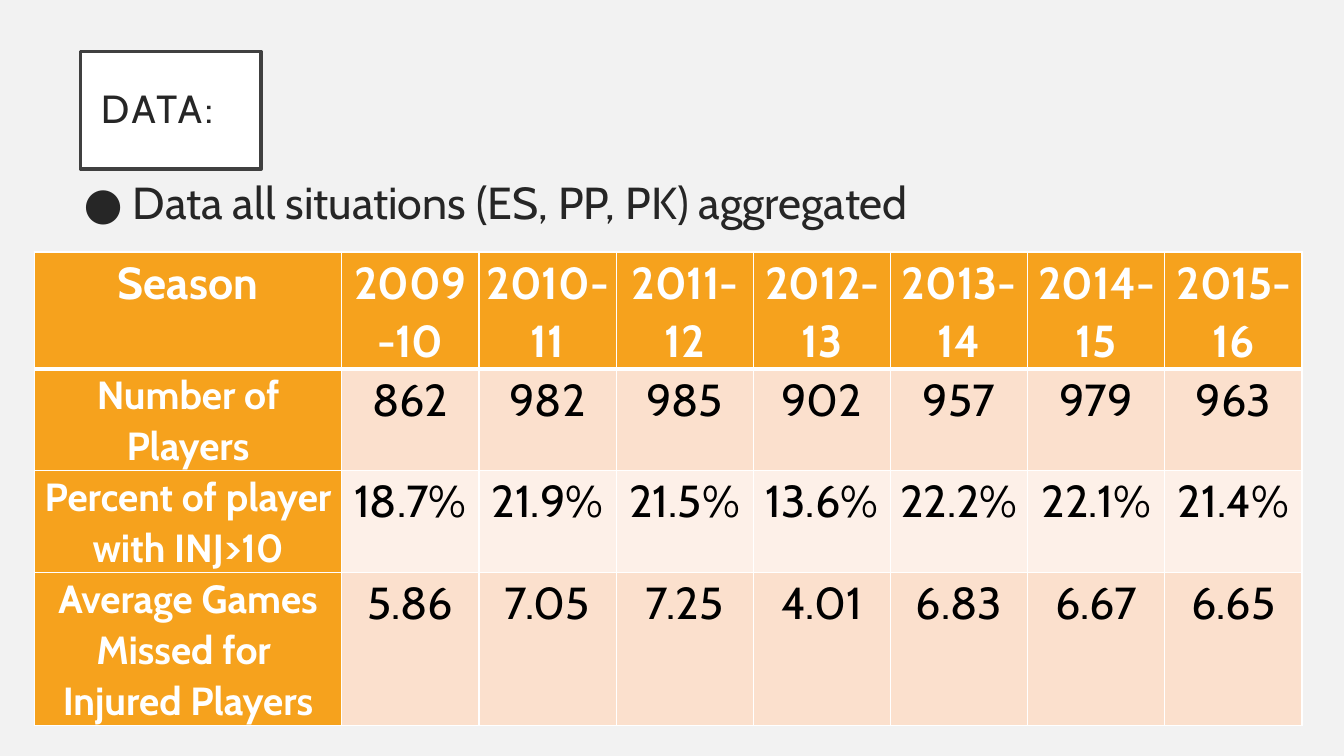
"""Build the slide with the season table of player injury data."""
from dataclasses import dataclass

from lxml import etree
from pptx import Presentation
from pptx import util as u
from pptx.dml import color
from pptx.enum import text
from pptx.oxml import ns


@dataclass(frozen=True)
class Theme:
    font: str = "Cabin"
    background: str = "F2F2F2"
    white: str = "FFFFFF"
    ink: str = "262626"
    frame: str = "404040"
    black: str = "000000"
    accent: str = "F6A21D"
    bands: tuple[str, str] = ("FBE0CD", "FDF0E8")
    small: float = 28
    large: float = 32


@dataclass(frozen=True)
class Box:
    left: float
    top: float
    width: float
    height: float


@dataclass(frozen=True)
class TableRow:
    label: tuple[str, ...]
    values: tuple[str, ...]
    height: float


THEME = Theme()
TITLE_BOX = Box(57.6, 36.7, 128.9, 84.2)
BODY_BOX = Box(52.6, 121, 893.5, 251.3)
TABLE_BOX = Box(24.5, 180, 905.6, 326.9)
LABEL_WIDTH, VALUE_WIDTH = 219.6, 98
ROWS = (
    TableRow(("Season",), ("2009-10", "2010-11", "2011-12", "2012-13", "2013-14", "2014-15", "2015-16"), 49),
    TableRow(("Number of Players",), ("862", "982", "985", "902", "957", "979", "963"), 50.4),
    TableRow(("Percent of player with INJ>10",),
             ("18.7%", "21.9%", "21.5%", "13.6%", "22.2%", "22.1%", "21.4%"), 42.5),
    TableRow(("Average Games Missed for ", "Injured Players"),
             ("5.86", "7.05", "7.25", "4.01", "6.83", "6.67", "6.65"), 69.8),
)


def rgb(value: str) -> color.RGBColor:
    return color.RGBColor.from_string(value)


def write(frame, lines: tuple[str, ...], *, size: float, ink: str, bold: bool = False,
          align=text.PP_ALIGN.LEFT, line_spacing: float = 1, before: float = 0,
          tracking: float = 0) -> None:
    for index, line in enumerate(lines):
        paragraph = frame.add_paragraph() if index else frame.paragraphs[0]
        paragraph.alignment = align
        paragraph.line_spacing = line_spacing
        paragraph.space_before = u.Pt(before)
        run = paragraph.add_run()
        run.text = line
        run.font.name = THEME.font
        run.font.size = u.Pt(size)
        run.font.bold = bold
        run.font.color.rgb = rgb(ink)
        if tracking:
            run._r.get_or_add_rPr().set("spc", str(round(tracking * 100)))


def place(shape, box: Box) -> None:
    shape.left, shape.top = u.Pt(box.left), u.Pt(box.top)
    shape.width, shape.height = u.Pt(box.width), u.Pt(box.height)


def set_margins(target, horizontal: float, vertical: float) -> None:
    target.margin_left = target.margin_right = u.Pt(horizontal)
    target.margin_top = target.margin_bottom = u.Pt(vertical)


def add_title(slide) -> None:
    title = slide.shapes.title
    place(title, TITLE_BOX)
    title.fill.solid()
    title.fill.fore_color.rgb = rgb(THEME.white)
    title.line.color.rgb = rgb(THEME.frame)
    title.line.width = u.Pt(2.5)
    frame = title.text_frame
    frame.auto_size = text.MSO_AUTO_SIZE.NONE
    frame.vertical_anchor = text.MSO_ANCHOR.MIDDLE
    set_margins(frame, 14.4, 14.4)
    write(frame, ("DATA:",), size=THEME.small, ink=THEME.ink, line_spacing=0.9, tracking=2)


def add_body(slide) -> None:
    body = slide.placeholders[1]
    place(body, BODY_BOX)
    frame = body.text_frame
    frame.auto_size = text.MSO_AUTO_SIZE.NONE
    write(frame, ("● Data all situations (ES, PP, PK) aggregated",),
          size=THEME.large, ink=THEME.ink, before=10)
    properties = frame.paragraphs[0]._p.get_or_add_pPr()
    properties.set("marL", "0")
    properties.set("indent", "0")
    etree.SubElement(properties, ns.qn("a:buNone"))


def add_borders(cell, top: float, bottom: float) -> None:
    properties = cell._tc.get_or_add_tcPr()
    for side, width in (("L", 1), ("R", 1), ("T", top), ("B", bottom)):
        line = etree.SubElement(properties, ns.qn(f"a:ln{side}"), w=str(u.Pt(width)))
        fill = etree.SubElement(line, ns.qn("a:solidFill"))
        etree.SubElement(fill, ns.qn("a:srgbClr"), val=THEME.white)


def add_season_table(slide) -> None:
    columns = len(ROWS[0].values) + 1
    graphic = slide.shapes.add_table(
        len(ROWS), columns, u.Pt(TABLE_BOX.left), u.Pt(TABLE_BOX.top),
        u.Pt(TABLE_BOX.width), u.Pt(TABLE_BOX.height))
    table = graphic.table
    for index, column in enumerate(table.columns):
        column.width = u.Pt(VALUE_WIDTH if index else LABEL_WIDTH)
    for row_index, row in enumerate(ROWS):
        table.rows[row_index].height = u.Pt(row.height)
        for column_index, lines in enumerate((row.label, *((value,) for value in row.values))):
            is_header = row_index == 0
            is_label = is_header or column_index == 0
            cell = table.cell(row_index, column_index)
            set_margins(cell, 5, 0)
            add_borders(cell, top=3 if row_index == 1 else 1, bottom=3 if is_header else 1)
            cell.fill.solid()
            cell.fill.fore_color.rgb = rgb(THEME.accent if is_label else THEME.bands[(row_index - 1) % 2])
            write(cell.text_frame, lines, bold=is_label, line_spacing=1.07,
                  size=THEME.small if is_label and not is_header else THEME.large,
                  ink=THEME.white if is_label else THEME.black, align=text.PP_ALIGN.CENTER)
    graphic.height = u.Pt(TABLE_BOX.height)


def main() -> None:
    presentation = Presentation()
    presentation.slide_width, presentation.slide_height = u.Pt(960), u.Pt(540)
    slide = presentation.slides.add_slide(presentation.slide_layouts[1])
    slide.background.fill.solid()
    slide.background.fill.fore_color.rgb = rgb(THEME.background)
    add_title(slide)
    add_body(slide)
    add_season_table(slide)
    presentation.save("out.pptx")


if __name__ == "__main__":
    main()
